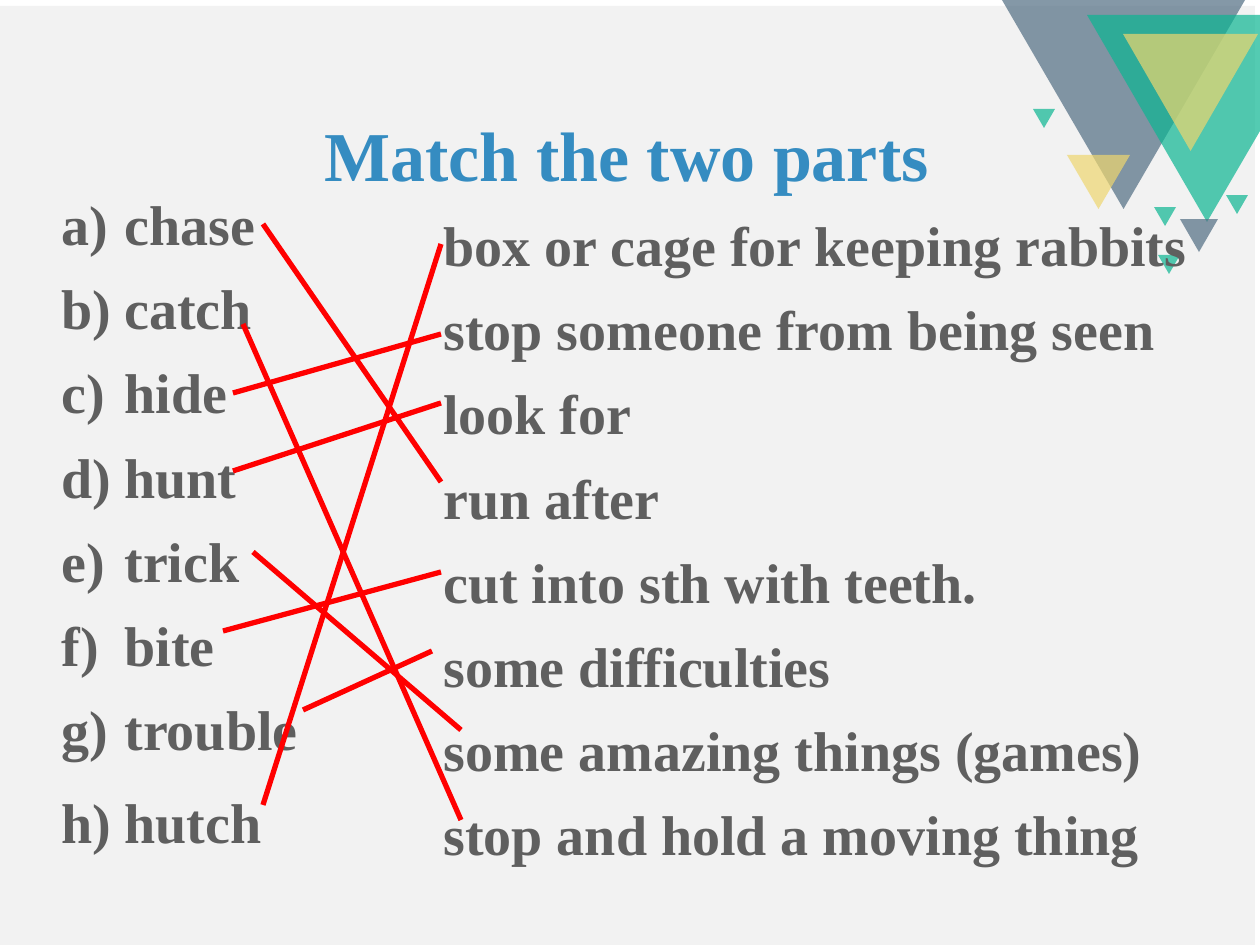
from lxml.etree import SubElement
from pptx import Presentation
from pptx.dml.color import RGBColor
from pptx.enum.shapes import MSO_CONNECTOR, MSO_SHAPE
from pptx.enum.text import MSO_ANCHOR, MSO_AUTO_SIZE, PP_ALIGN
from pptx.oxml.ns import qn
from pptx.util import Pt

# Content
TITLE = "Match the two parts"
WORDS = ["chase", "catch", "hide", "hunt", "trick", "bite", "trouble", "hutch"]
MEANINGS = [
    "box or cage for keeping rabbits",
    "stop someone from being seen",
    "look for",
    "run after",
    "cut into sth with teeth.",
    "some difficulties",
    "some amazing things (games)",
    "stop and hold a moving thing",
]
# Each word's answer line: from x, y to x, y
ANSWERS = {
    "chase": (263, 224, 441, 482),
    "catch": (243, 324, 461, 820),
    "hide": (233, 393, 441, 334),
    "hunt": (233, 471, 441, 403),
    "trick": (253, 552, 461, 730),
    "bite": (223, 631, 441, 572),
    "trouble": (303, 710, 432, 651),
    "hutch": (263, 805, 441, 244),
}
# Downward triangles: colour, left, top, width, height
LARGE_TRIANGLE = ("slate", 1002, 0, 243, 209)
TRIANGLES = [
    ("yellow", 1123, 34, 135, 117),
    ("yellow", 1067, 155, 63, 54),
    ("green", 1226, 195, 22, 19),
    ("green", 1158, 255, 22, 19),
    ("green", 1154, 207, 22, 19),
    ("slate", 1180, 219, 38, 33),
    ("green", 1033, 109, 22, 19),
]
CLIPPED_TRIANGLE = [(1087, 15), (1260, 15), (1260, 131), (1207, 222)]

THEME = {
    "font": "Times New Roman",
    "title_size": 40, "list_size": 32, "line_width": 3, "opacity": 70,
    "panel": "F2F2F2", "title": "358CC1", "text": "5F5F5F", "answer": "FF0000",
    "slate": "516D82", "green": "0CB692", "yellow": "EED66F",
}
EMU_PER_PX = 914400 / 126


def px(value):
    return round(value * EMU_PER_PX)


def color(name):
    return RGBColor.from_string(THEME[name])


def apply(target, values):
    for name, value in values.items():
        setattr(target, name, value)


def place(shape, left, top, width, height):
    apply(shape, {"left": px(left), "top": px(top),
                  "width": px(width), "height": px(height)})


def paint(shape, color_name, opacity=100):
    shape.shadow.inherit = False
    shape.fill.solid()
    shape.fill.fore_color.rgb = color(color_name)
    shape.line.fill.background()
    if opacity < 100:
        tint = shape.element.spPr.find(".//" + qn("a:srgbClr"))
        SubElement(tint, qn("a:alpha"), val=str(opacity * 1000))


def format_font(font, size, color_name):
    apply(font, {"name": THEME["font"], "size": Pt(THEME[size]), "bold": True})
    font.color.rgb = color(color_name)


def add_triangle(shapes, color_name, *box):
    triangle = shapes.add_shape(MSO_SHAPE.ISOSCELES_TRIANGLE, *map(px, box))
    triangle.rotation = 180
    paint(triangle, color_name, THEME["opacity"])


def add_list(shapes, items, box, lettered=False):
    frame = shapes.add_textbox(*map(px, box)).text_frame
    frame.word_wrap = True
    frame.text = "\n".join(items)
    for paragraph in frame.paragraphs:
        apply(paragraph, {"line_spacing": 1.2, "space_before": Pt(2)})
        format_font(paragraph.runs[0].font, "list_size", "text")
        if lettered:
            properties = paragraph.runs[0]._r.getparent().get_or_add_pPr()
            properties.set("marL", str(px(63)))
            properties.set("indent", str(px(-63)))
            SubElement(properties, qn("a:buFont"), typeface=THEME["font"])
            SubElement(properties, qn("a:buAutoNum"), type="alphaLcParenR")
    return frame


def add_answer(shapes, *ends):
    line = shapes.add_connector(MSO_CONNECTOR.STRAIGHT, *map(px, ends))
    line.line.color.rgb = color("answer")
    line.line.width = Pt(THEME["line_width"])
    SubElement(line.element.spPr, qn("a:effectLst"))


def main():
    presentation = Presentation()
    apply(presentation, {"slide_width": px(1260), "slide_height": px(945)})
    slide = presentation.slides.add_slide(presentation.slide_layouts[5])
    shapes = slide.shapes

    # Backdrop and corner triangles
    panel = shapes.add_shape(MSO_SHAPE.RECTANGLE, *map(px, (-5, 6, 1260, 945)))
    paint(panel, "panel")
    add_triangle(shapes, *LARGE_TRIANGLE)
    start, *corners = [(px(x), px(y)) for x, y in CLIPPED_TRIANGLE]
    builder = shapes.build_freeform(*start)
    builder.add_line_segments(corners, close=True)
    paint(builder.convert_to_shape(), "green", THEME["opacity"])
    for triangle in TRIANGLES:
        add_triangle(shapes, *triangle)

    # Two lists; the last word sits a little lower
    words = add_list(shapes, WORDS, (49, 170, 328, 679), lettered=True)
    words.paragraphs[-1].space_before = Pt(7)
    add_list(shapes, MEANINGS, (431, 191, 784, 656))

    # Title, brought in front of the backdrop
    title = shapes.title
    place(title, 312, 105, 655, 97)
    title.text_frame.text = TITLE
    apply(title.text_frame, {"auto_size": MSO_AUTO_SIZE.NONE,
                             "vertical_anchor": MSO_ANCHOR.TOP})
    heading = title.text_frame.paragraphs[0]
    heading.alignment = PP_ALIGN.LEFT
    format_font(heading.runs[0].font, "title_size", "title")
    title.element.getparent().append(title.element)

    # Answer lines
    for word in WORDS:
        add_answer(shapes, *ANSWERS[word])

    presentation.save("out.pptx")


if __name__ == "__main__":
    main()
